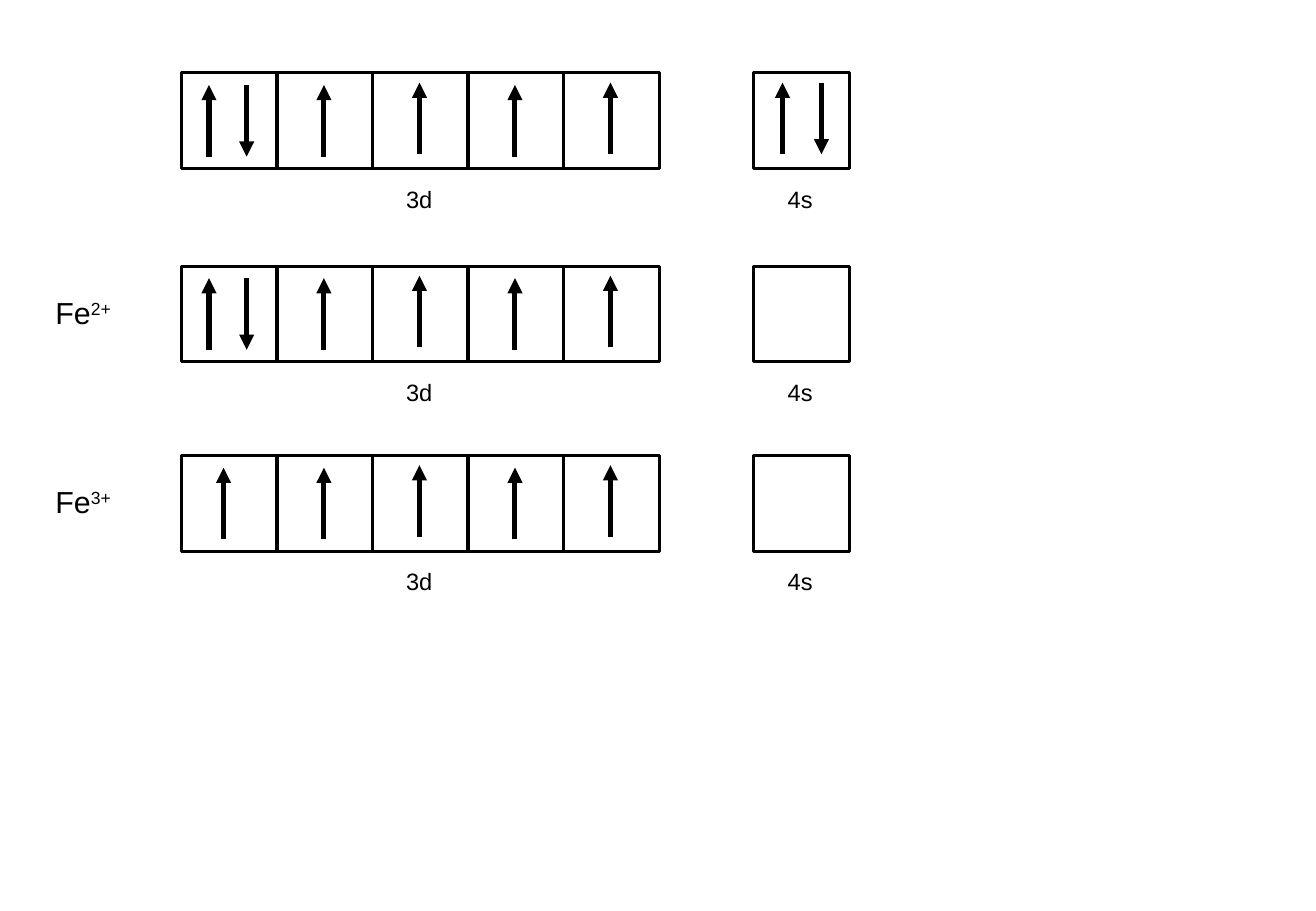
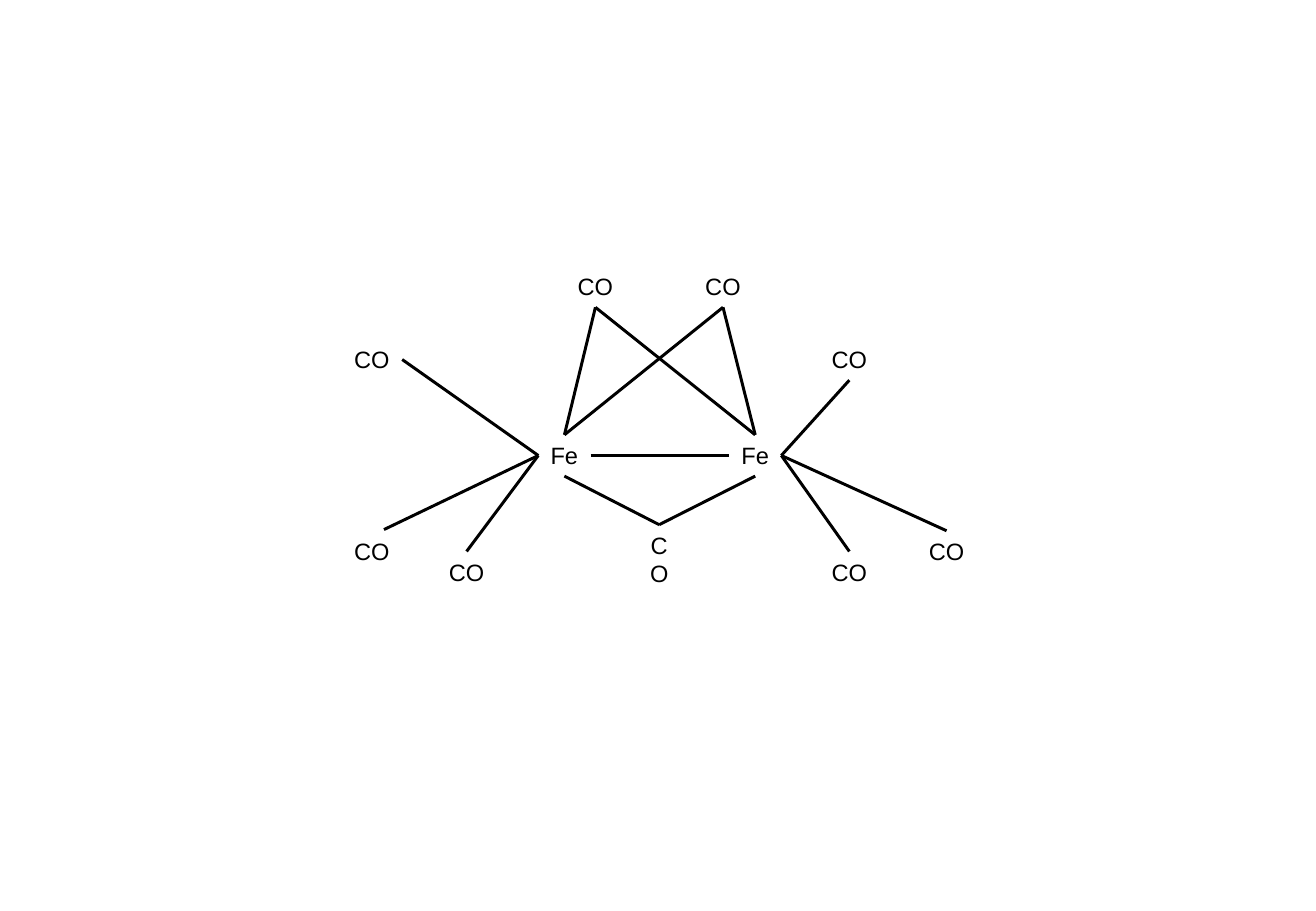
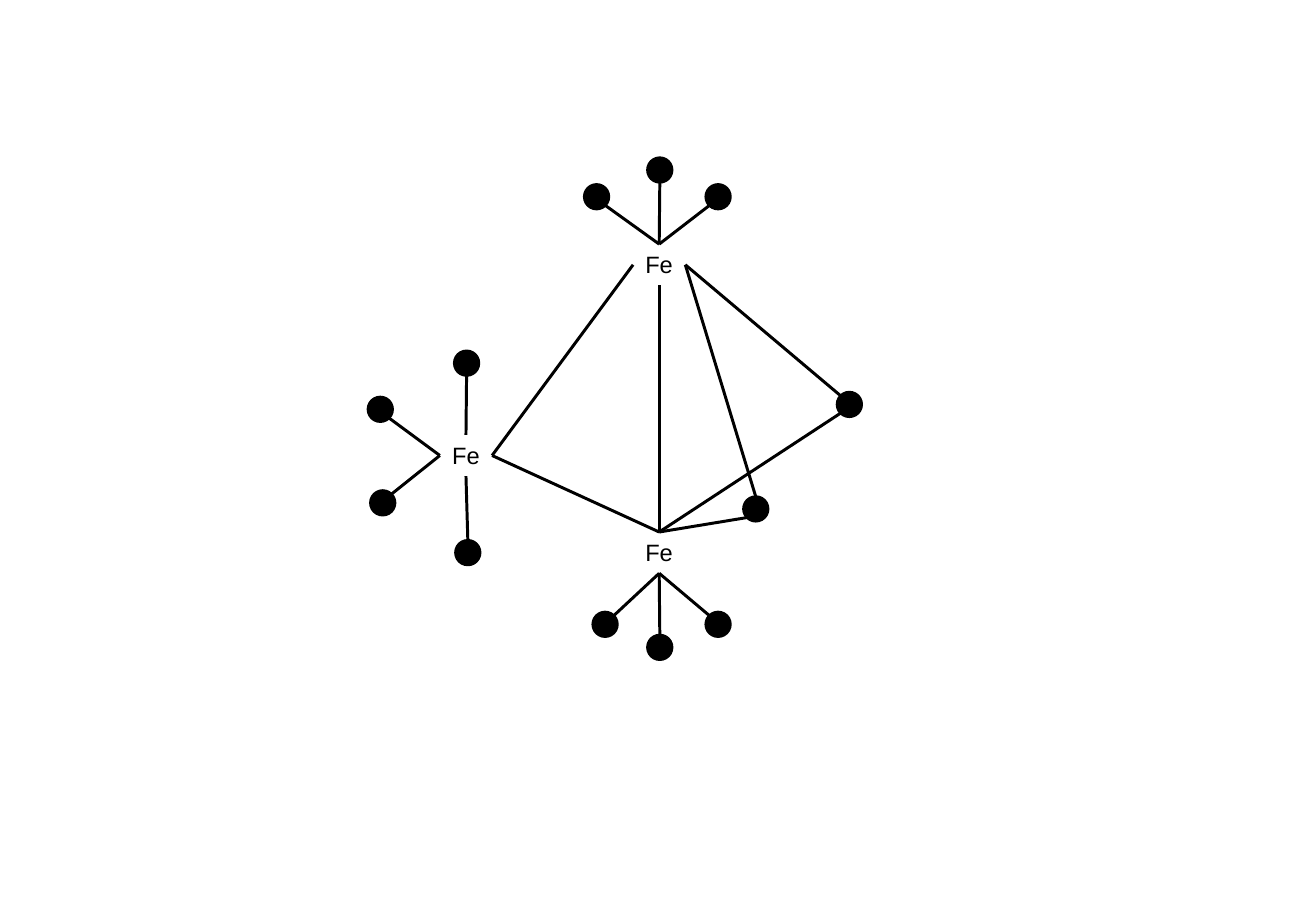
"""Draw iron orbital boxes and two iron carbonyl structures."""
import math

from lxml import etree
from pptx import Presentation
from pptx.dml.color import RGBColor
from pptx.enum.shapes import MSO_CONNECTOR, MSO_SHAPE
from pptx.enum.text import MSO_AUTO_SIZE, PP_ALIGN
from pptx.oxml.ns import qn
from pptx.util import Inches, Pt

STRAIGHT = MSO_CONNECTOR.STRAIGHT
RECTANGLE = MSO_SHAPE.RECTANGLE
OVAL = MSO_SHAPE.OVAL
FIT_SHAPE = MSO_AUTO_SIZE.SHAPE_TO_FIT_TEXT
CENTER = PP_ALIGN.CENTER

COLORS = {"ink": "000000"}
INK = RGBColor.from_string(COLORS["ink"])
FONT = "Arial"
BOND_WIDTH = 1.75
SPIN_WIDTH = 3
LABEL_HEIGHT = 0.34
FE_WIDTH = 0.43
CO_WIDTH = 0.5
DOT_SIZE = 0.2
TOP, LEFT, BOTTOM, RIGHT = range(4)

CELL = 0.79
CELL_PITCH = 3.93 / 5
S_OFFSET = 4.71
SPIN_LENGTH = 0.59
SPIN_TOPS = (0.1, 0.1, 0.08, 0.1, 0.08)
PAIR = ((0.23, True), (0.54, False))
SINGLE = ((0.39, True),)
LEFT_SINGLE = ((0.35, True),)
EMPTY = ()


def add_label(slide, text, left, top, width, height=LABEL_HEIGHT, size=14):
    """Add a centred text box that fits its text."""
    label = slide.shapes.add_textbox(
        Inches(left), Inches(top), Inches(width), Inches(height))
    frame = label.text_frame
    frame.text = text
    frame.word_wrap = False
    frame.auto_size = FIT_SHAPE
    for paragraph in frame.paragraphs:
        paragraph.alignment = CENTER
        for run in paragraph.runs:
            run.font.name = FONT
            run.font.size = Pt(size)
            run.font.color.rgb = INK
    return label


def add_outline(slide, preset, left, top, size):
    """Add an unfilled square or circle with the common outline."""
    outline = slide.shapes.add_shape(
        preset, Inches(left), Inches(top), Inches(size), Inches(size))
    outline.shadow.inherit = False
    outline.fill.background()
    outline.line.color.rgb = INK
    outline.line.width = Pt(BOND_WIDTH)
    return outline


def add_dot(slide, left, top):
    """Add a solid dot that stands for a ligand."""
    dot = add_outline(slide, OVAL, left, top, DOT_SIZE)
    dot.fill.solid()
    dot.fill.fore_color.rgb = INK


def add_line(slide, start, end, width=BOND_WIDTH, arrow=False):
    """Add a straight line between two points in inches."""
    line = slide.shapes.add_connector(
        STRAIGHT, *(Inches(value) for value in (*start, *end)))
    line.line.color.rgb = INK
    line.line.width = Pt(width)
    properties = line.element.spPr
    if arrow:
        outline = properties.find(qn("a:ln"))
        etree.SubElement(outline, qn("a:tailEnd"), type="triangle")
    etree.SubElement(properties, qn("a:effectLst"))
    return line


def join_labels(slide, start, start_side, end, end_side):
    """Bond two labels at the middle of the given sides."""
    bond = add_line(slide, (0, 0), (1, 1))
    bond.begin_connect(start, start_side)
    bond.end_connect(end, end_side)


def dot_edge(left, top, step):
    """Return the dot's edge point, in eighths of a turn left from the top."""
    radius = DOT_SIZE / 2
    angle = step * math.pi / 4
    return (left + radius - radius * math.sin(angle),
            top + radius - radius * math.cos(angle))


def draw_cell(slide, left, top, spins, spin_top):
    """Draw one orbital cell with its spin arrows."""
    add_outline(slide, RECTANGLE, left, top, CELL)
    for offset, points_up in spins:
        high = (left + offset, top + spin_top)
        low = (left + offset, top + spin_top + SPIN_LENGTH)
        start, end = (low, high) if points_up else (high, low)
        add_line(slide, start, end, SPIN_WIDTH, arrow=True)


def draw_configuration(slide, left, top, d_spins, s_spins, charge):
    """Draw the 3d and 4s cells of one species with their labels."""
    for index, (spins, spin_top) in enumerate(zip(d_spins, SPIN_TOPS)):
        draw_cell(slide, left + index * CELL_PITCH, top, spins, spin_top)
    draw_cell(slide, left + S_OFFSET, top, s_spins, 0.08)
    add_label(slide, "3d", left + 1.75, top + 0.87, 0.42)
    add_label(slide, "4s", left + 4.89, top + 0.87, 0.41)
    if charge:
        ion = add_label(slide, "Fe", left - 1.15, top + 0.18, 0.69, 0.4, 18)
        superscript = ion.text_frame.paragraphs[0].add_run()
        superscript.text = charge
        superscript.font.name = FONT
        superscript.font.size = Pt(18)
        superscript.font.color.rgb = INK
        superscript._r.get_or_add_rPr().set("baseline", "30000")


def draw_orbitals(slide, left, top):
    """Draw the configurations of iron and its two ions."""
    paired = (PAIR,) + (SINGLE,) * 4
    unpaired = (LEFT_SINGLE,) + (SINGLE,) * 4
    s_pair = ((0.24, True), (0.56, False))
    for offset, d_spins, s_spins, charge in (
            (0, paired, s_pair, ""),
            (1.59, paired, EMPTY, "2+"),
            (3.15, unpaired, EMPTY, "3+")):
        draw_configuration(slide, left, top + offset, d_spins, s_spins, charge)


def draw_dimer(slide, left, top):
    """Draw two bonded iron atoms with bridging and terminal CO."""
    iron_left, iron_right = (
        add_label(slide, "Fe", left + x, top + 1.39, FE_WIDTH)
        for x in (1.62, 3.19))
    join_labels(slide, iron_left, RIGHT, iron_right, LEFT)

    bridges = [(add_label(slide, "CO", left + x, top, CO_WIDTH), BOTTOM, TOP)
               for x in (1.84, 2.89)]
    lower = add_label(slide, "C\nO", left + 2.43, top + 2.13, 0.37, 0.57)
    bridges.append((lower, TOP, BOTTOM))
    for carbonyl, carbonyl_side, iron_side in bridges:
        for iron in (iron_left, iron_right):
            join_labels(slide, iron, iron_side, carbonyl, carbonyl_side)

    for iron, iron_side, x, y, side in (
            (iron_left, LEFT, 0, 0.6, RIGHT),
            (iron_left, LEFT, 0.78, 2.35, TOP),
            (iron_right, RIGHT, 3.93, 0.6, BOTTOM),
            (iron_right, RIGHT, 3.93, 2.35, TOP),
            (iron_right, RIGHT, 4.73, 2.18, TOP)):
        carbonyl = add_label(slide, "CO", left + x, top + y, CO_WIDTH)
        join_labels(slide, iron, iron_side, carbonyl, side)

    add_label(slide, "CO", left, top + 2.18, CO_WIDTH)
    outer_bond = add_line(slide, (0, 0), (left + 0.35, top + 2.17))
    outer_bond.begin_connect(iron_left, LEFT)


def draw_cluster(slide, left, top):
    """Draw a triangle of iron atoms with ligands as dots."""
    iron_top, iron_left, iron_bottom = (
        add_label(slide, "Fe", left + x, top + y, FE_WIDTH)
        for x, y in ((2.18, 0.71), (0.59, 2.28), (2.18, 3.08)))
    join_labels(slide, iron_top, LEFT, iron_left, RIGHT)
    join_labels(slide, iron_top, BOTTOM, iron_bottom, TOP)
    join_labels(slide, iron_left, RIGHT, iron_bottom, TOP)

    for x, y, bonds in (
            (0.71, 1.59, ((iron_left, TOP, 4),)),
            (0.72, 3.15, ((iron_left, BOTTOM, 0),)),
            (0.02, 2.74, ((iron_left, LEFT, 7),)),
            (0, 1.97, ((iron_left, LEFT, 5),)),
            (2.3, 0, ((iron_top, TOP, 4),)),
            (1.78, 0.22, ((iron_top, TOP, 5),)),
            (2.78, 0.22, ((iron_top, TOP, 3),)),
            (2.3, 3.93, ((iron_bottom, BOTTOM, 0),)),
            (2.78, 3.74, ((iron_bottom, BOTTOM, 1),)),
            (1.85, 3.74, ((iron_bottom, BOTTOM, 7),)),
            (3.09, 2.79, ((iron_top, RIGHT, 0), (iron_bottom, TOP, 3))),
            (3.86, 1.93, ((iron_top, RIGHT, 1), (iron_bottom, TOP, 3)))):
        add_dot(slide, left + x, top + y)
        for iron, side, step in bonds:
            edge = dot_edge(left + x, top + y, step)
            add_line(slide, (0, 0), edge).begin_connect(iron, side)


def main():
    """Build and save the three slides."""
    deck = Presentation()
    deck.slide_width = Inches(10.83)
    deck.slide_height = Inches(7.5)
    blank = deck.slide_layouts[6]
    for draw, left, top in (
            (draw_orbitals, 1.49, 0.6),
            (draw_dimer, 2.81, 2.19),
            (draw_cluster, 3.03, 1.3)):
        draw(deck.slides.add_slide(blank), left, top)
    deck.save("out.pptx")


if __name__ == "__main__":
    main()
